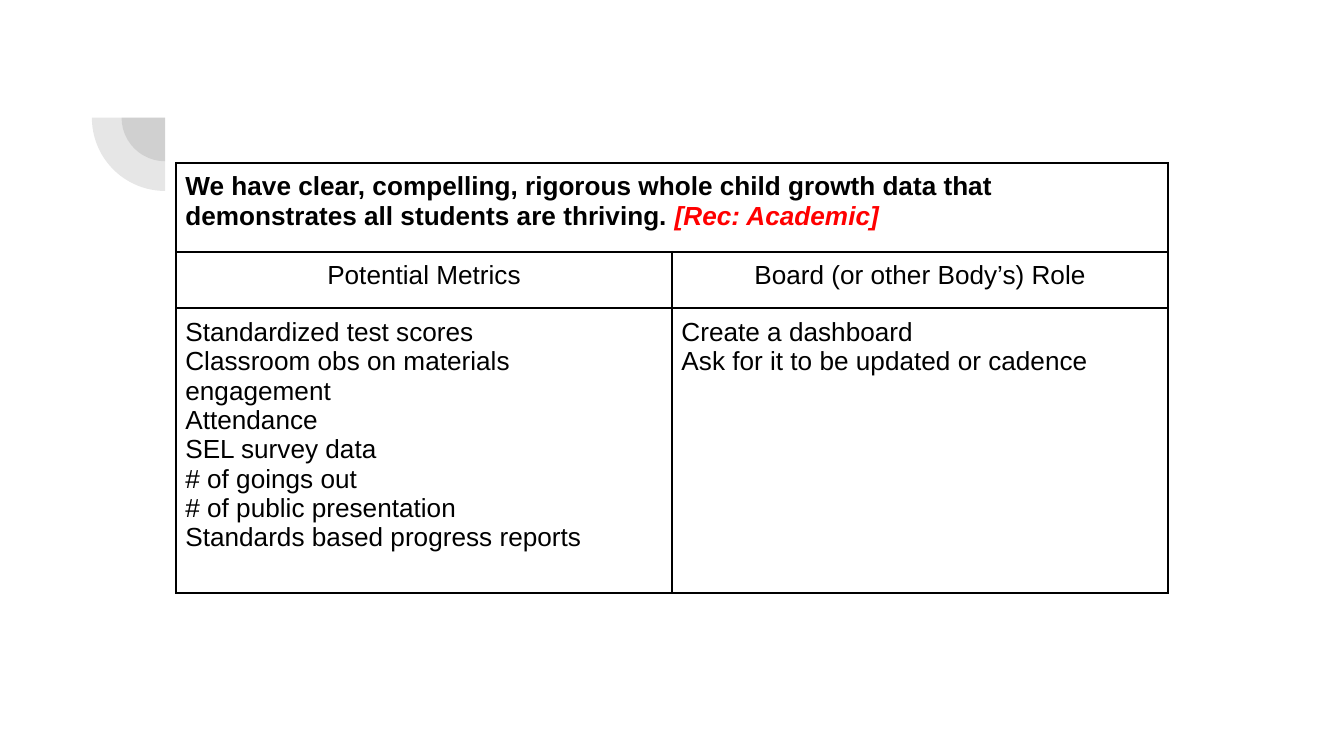
from dataclasses import dataclass

from lxml import etree
from pptx import Presentation
from pptx.dml.color import RGBColor
from pptx.enum.shapes import MSO_SHAPE
from pptx.enum.text import PP_ALIGN
from pptx.oxml.ns import qn
from pptx.util import Pt

PIE = MSO_SHAPE.PIE
LEFT, CENTER = PP_ALIGN.LEFT, PP_ALIGN.CENTER
COLORS = {"text": "000000", "accent": "FF0000", "border": "000000", "pie": "424242"}
FONT = "Arial"
PIE_CENTER = (88.5, 63)
PIE_DIAMETERS = (46.8, 78.6)
PIE_ALPHA = 13
TABLE_LEFT, TABLE_TOP = 94.3, 87.2
COLUMN_WIDTH = 265.8
ROW_HEIGHTS = (47.7, 30.3, 152.4)
CELL_MARGIN = 5


@dataclass
class CellText:
    row: int
    column: int
    lines: tuple[str, ...]
    align: int = LEFT
    bold: bool = False


CELLS = (
    CellText(0, 0, ("We have clear, compelling, rigorous whole child growth data "
                    "that demonstrates all students are thriving. ",), bold=True),
    CellText(1, 0, ("Potential Metrics",), CENTER),
    CellText(1, 1, ("Board (or other Body’s) Role",), CENTER),
    CellText(2, 0, (
        "Standardized test scores",
        "Classroom obs on materials engagement",
        "Attendance",
        "SEL survey data",
        "# of goings out",
        "# of public presentation",
        "Standards based progress reports",
    )),
    CellText(2, 1, ("Create a dashboard", "Ask for it to be updated or cadence")),
)


def add_text(paragraph, text: str, *, size: float = 14, color: str = "text",
             bold: bool = False, italic: bool = False, align: int = LEFT) -> None:
    paragraph.alignment = align
    run = paragraph.add_run()
    run.text = text
    run.font.name = FONT
    run.font.size = Pt(size)
    run.font.bold = bold
    run.font.italic = italic
    run.font.color.rgb = RGBColor.from_string(COLORS[color])


def add_quarter_pie(slide, diameter: float) -> None:
    left, top = (center - diameter / 2 for center in PIE_CENTER)
    shape = slide.shapes.add_shape(PIE, Pt(left), Pt(top), Pt(diameter), Pt(diameter))
    shape.adjustments[0] = 108
    shape.adjustments[1] = 162
    shape.rotation = 270
    shape.shadow.inherit = False
    shape.line.fill.background()
    shape.fill.solid()
    shape.fill.fore_color.rgb = RGBColor.from_string(COLORS["pie"])
    color = shape.fill._xPr.find(".//" + qn("a:srgbClr"))
    etree.SubElement(color, qn("a:alpha"), val=str(PIE_ALPHA * 1000))


def format_cell(cell) -> None:
    cell.margin_left = cell.margin_right = Pt(CELL_MARGIN)
    cell.margin_top = cell.margin_bottom = Pt(CELL_MARGIN)
    cell.fill.background()
    properties = cell._tc.get_or_add_tcPr()
    for index, side in enumerate(("lnL", "lnR", "lnT", "lnB")):
        line = etree.Element(qn(f"a:{side}"), w=str(Pt(1)))
        fill = etree.SubElement(line, qn("a:solidFill"))
        etree.SubElement(fill, qn("a:srgbClr"), val=COLORS["border"])
        properties.insert(index, line)


def add_metrics_table(slide):
    table = slide.shapes.add_table(
        len(ROW_HEIGHTS), 2, Pt(TABLE_LEFT), Pt(TABLE_TOP),
        Pt(2 * COLUMN_WIDTH), Pt(sum(ROW_HEIGHTS))).table
    table.first_row = table.horz_banding = False
    for column in table.columns:
        column.width = Pt(COLUMN_WIDTH)
    for row, height in zip(table.rows, ROW_HEIGHTS):
        row.height = Pt(height)
        for cell in row.cells:
            format_cell(cell)
    table.cell(0, 0).merge(table.cell(0, 1))
    return table


def fill_cell(table, content: CellText) -> None:
    frame = table.cell(content.row, content.column).text_frame
    for index, line in enumerate(content.lines):
        paragraph = frame.add_paragraph() if index else frame.paragraphs[0]
        add_text(paragraph, line, bold=content.bold, align=content.align)


def main() -> None:
    presentation = Presentation()
    presentation.slide_width, presentation.slide_height = Pt(720), Pt(405)
    slide = presentation.slides.add_slide(presentation.slide_layouts[6])

    # Corner decoration
    for diameter in PIE_DIAMETERS:
        add_quarter_pie(slide, diameter)

    # Goal, metrics and roles
    table = add_metrics_table(slide)
    for content in CELLS:
        fill_cell(table, content)
    goal = table.cell(0, 0).text_frame.paragraphs[0]
    add_text(goal, "[Rec: Academic]", color="accent", bold=True, italic=True)

    presentation.save("out.pptx")


if __name__ == "__main__":
    main()
